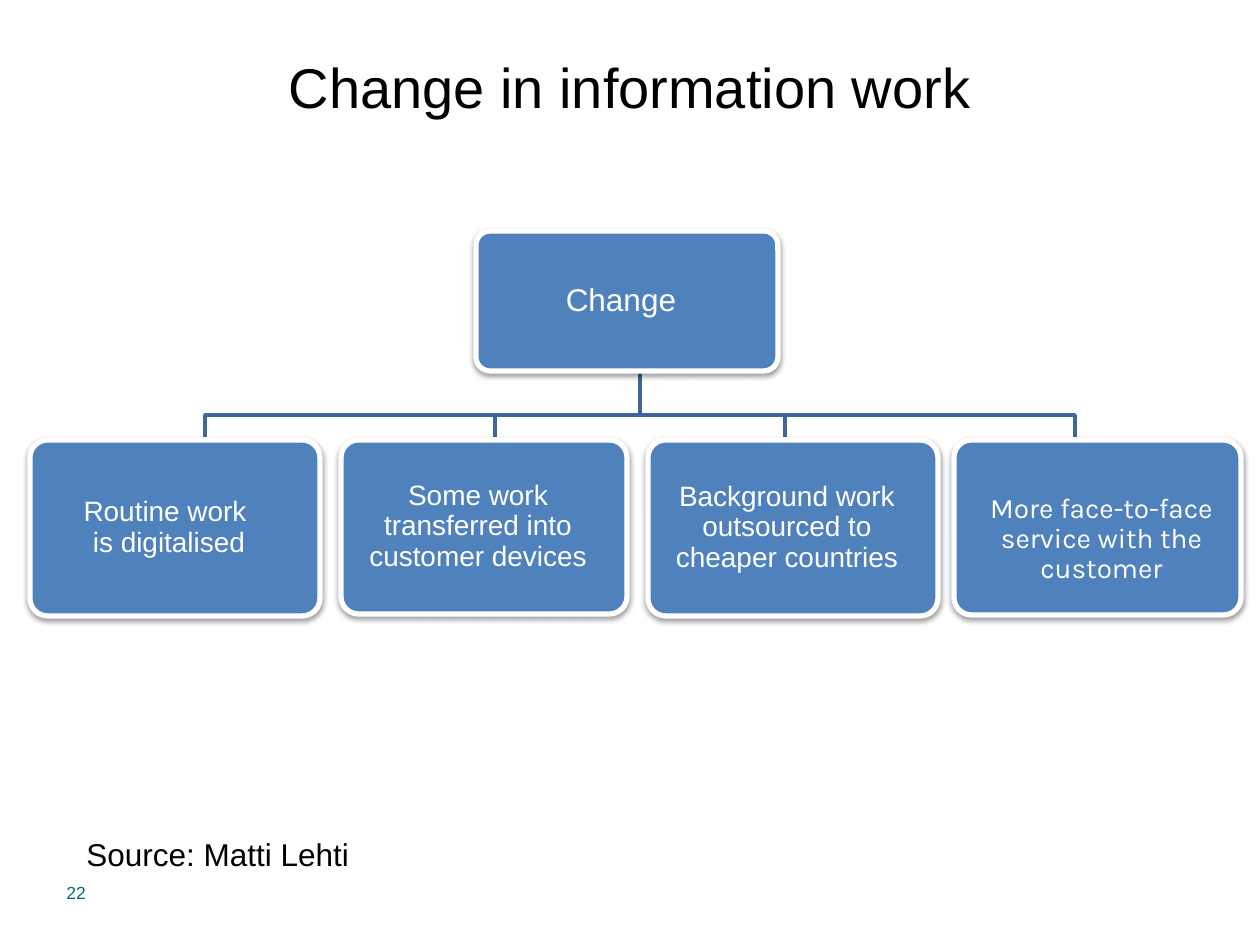
import lxml.etree
import pptx
import pptx.dml.color
import pptx.enum.shapes
import pptx.enum.text
import pptx.oxml.ns
import pptx.util

PX = 914400 // 126
ALIGN = pptx.enum.text.PP_ALIGN
ANCHOR = pptx.enum.text.MSO_ANCHOR


def rgb(code):
    return pptx.dml.color.RGBColor.from_string(code)


def emu(*sizes):
    return [pptx.util.Emu(size * PX) for size in sizes]


class Chart:
    """Holds the style and the slide being drawn."""
    font = "Arial"
    ink, pale, teal = "000000", "FFFFFF", "076E75"
    blue, wire = "4F81BD", "3F6797"

    def __init__(self, slide):
        self.slide = slide
        self.shapes = slide.shapes

    def text(self, box, lines, size, color, font=None, align=ALIGN.LEFT,
             anchor=ANCHOR.TOP, inset=None, pitch=None):
        frame = self.shapes.add_textbox(*emu(*box)).text_frame
        frame.word_wrap = True
        frame.vertical_anchor = anchor
        if inset is not None:
            frame.margin_left, frame.margin_top = emu(inset, inset)
            frame.margin_right, frame.margin_bottom = emu(inset, inset)
        para = frame.paragraphs[0]
        para.alignment = align
        if pitch:
            para.line_spacing = pitch
        for i, line in enumerate(lines):
            if i:
                para.add_line_break()
            run = para.add_run()
            run.text = line
            run.font.name = font or self.font
            run.font.size = pptx.util.Pt(size)
            run.font.color.rgb = rgb(color)

    def shade(self, shape):
        """Add a soft shadow below the shape."""
        shape.shadow.inherit = False
        qn = pptx.oxml.ns.qn
        add = lxml.etree.SubElement
        effects = shape._element.spPr.find(qn("a:effectLst"))
        outer = add(effects, qn("a:outerShdw"), blurRad="40000", dist="20000",
                    dir="5400000", rotWithShape="0")
        tint = add(outer, qn("a:srgbClr"), val=self.ink)
        add(tint, qn("a:alpha"), val="38000")

    def card(self, box, lines, size, font=None, shift=(0, 0)):
        kind = pptx.enum.shapes.MSO_SHAPE.ROUNDED_RECTANGLE
        shape = self.shapes.add_shape(kind, *emu(*box))
        shape.adjustments[0] = 0.1
        shape.fill.solid()
        shape.fill.fore_color.rgb = rgb(self.blue)
        shape.line.color.rgb = rgb(self.pale)
        shape.line.width = pptx.util.Pt(3)
        self.shade(shape)
        left, top, wide, high = box
        inner = (left + shift[0], top + 5 + shift[1], wide - 12, high - 10)
        self.text(inner, lines, size, self.pale, font, ALIGN.CENTER,
                  ANCHOR.MIDDLE, inset=5, pitch=0.9)

    def branch(self, start, bend, end):
        """Draw an elbow line that turns at the height of bend."""
        path = self.shapes.build_freeform(*start, scale=PX)
        path.add_line_segments([(start[0], bend), (end[0], bend), end],
                               close=False)
        shape = path.convert_to_shape()
        shape.fill.background()
        shape.line.color.rgb = rgb(self.wire)
        shape.line.width = pptx.util.Pt(2)
        shape.shadow.inherit = False


def main():
    deck = pptx.Presentation()
    deck.slide_width, deck.slide_height = emu(1260, 945)
    chart = Chart(deck.slides.add_slide(deck.slide_layouts[6]))

    chart.text((63, 8, 1134, 157), ["Change in information work"], 32,
               chart.ink, align=ALIGN.CENTER, anchor=ANCHOR.MIDDLE)

    for i in range(4):
        chart.branch((640, 368), 415, (205 + 290 * i, 437))

    chart.card((476, 231, 302, 140), ["Change"], 18)
    cards = [
        (30, 290, 176, ["Routine work ", "is digitalised"], None, (0, 0)),
        (341, 286, 174, ["Some work transferred into customer devices"],
         None, (0, 0)),
        (648, 290, 176, ["Background work outsourced to cheaper countries"],
         None, (0, 0)),
        (954, 287, 175, ["More face-to-face service with the customer"],
         "Karla", (10, 12)),
    ]
    for left, wide, high, lines, font, shift in cards:
        chart.card((left, 440, wide, high), lines, 16, font, shift)

    chart.text((74, 829, 824, 89), ["Source: Matti Lehti"], 18, chart.ink)
    chart.text((54, 876, 294, 50), ["22"], 10, chart.teal)
    deck.save("out.pptx")


if __name__ == "__main__":
    main()
